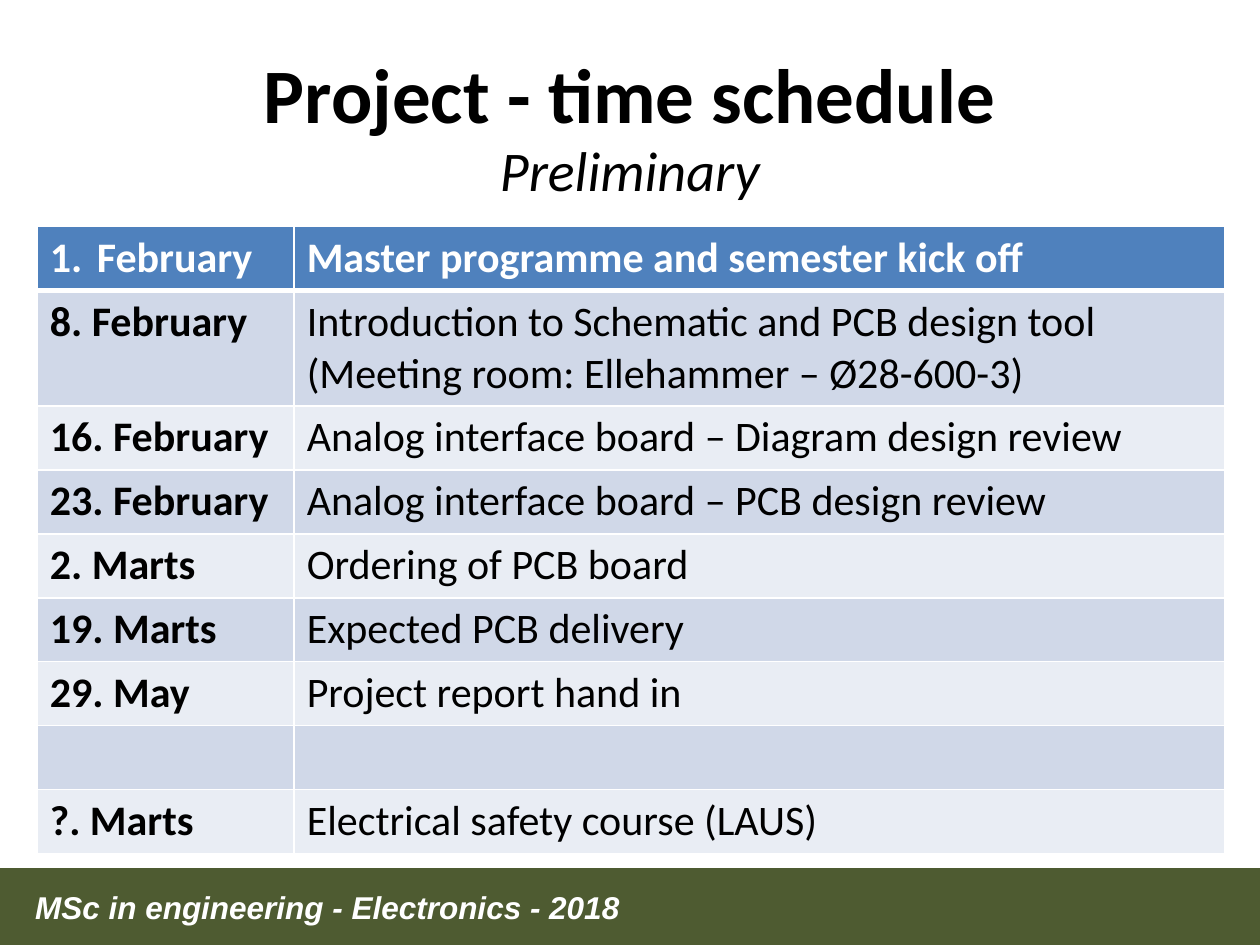
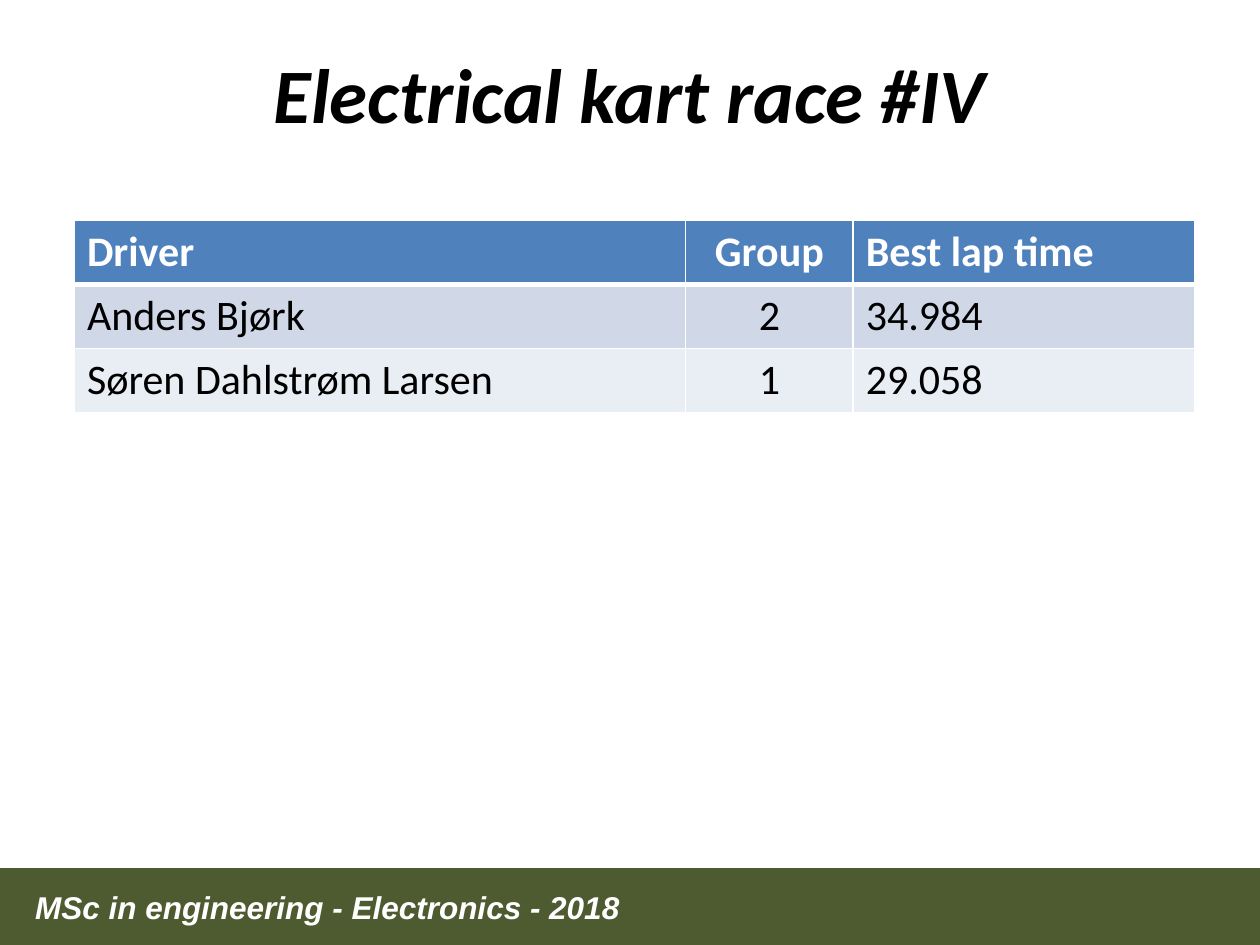
from lxml import etree
from pptx import Presentation
from pptx.dml.color import RGBColor
from pptx.enum.shapes import MSO_SHAPE
from pptx.enum.text import MSO_ANCHOR, MSO_AUTO_SIZE, PP_ALIGN
from pptx.oxml.ns import qn
from pptx.util import Cm, Pt

RECT = MSO_SHAPE.RECTANGLE
TOP = MSO_ANCHOR.TOP
NO_FIT = MSO_AUTO_SIZE.NONE
LEFT, CENTER = PP_ALIGN.LEFT, PP_ALIGN.CENTER

FOOTER = "MSc in engineering - Electronics - 2018"
ROW_HEIGHT = 1.29

SCHEDULE = [
    ("February", "Master programme and semester kick off"),
    ("8. February", "Introduction to Schematic and PCB design tool "
                    "(Meeting room: Ellehammer – Ø28-600-3)"),
    ("16. February", "Analog interface board – Diagram design review"),
    ("23. February", "Analog interface board – PCB design review"),
    ("2. Marts", "Ordering of PCB board"),
    ("19. Marts", "Expected PCB delivery"),
    ("29. May", "Project report hand in"),
    ("", ""),
    ("?. Marts", "Electrical safety course (LAUS)"),
]
LAP_TIMES = [
    ("Driver", "Group", "Best lap time"),
    ("Anders Bjørk", "2", "34.984"),
    ("Søren Dahlstrøm Larsen", "1", "29.058"),
]


def rgb(hex_color):
    return RGBColor.from_string(hex_color)


class Deck:
    BODY_FONT, FOOTER_FONT = "Calibri", "Arial"
    BLACK, WHITE, GREEN = "000000", "FFFFFF", "4E5B31"
    HEADER, BANDS = "4F81BD", ("D0D8E8", "E9EDF4")

    def __init__(self):
        self.prs = Presentation()
        self.prs.slide_width, self.prs.slide_height = Cm(25.4), Cm(19.05)
        self.s = None

    def style(self, font, name, size, color, bold=False, italic=False):
        font.name, font.size = name, Pt(size)
        font.bold, font.italic = bold, italic
        font.color.rgb = rgb(color)

    def slide(self, *title_lines):
        """Start a slide; each title line is (text, size, bold, italic)."""
        self.s = self.prs.slides.add_slide(self.prs.slide_layouts[5])
        self.footer()
        self.title(title_lines)

    def title(self, lines):
        sp = self.s.shapes.title
        sp.left, sp.top, sp.width, sp.height = Cm(1.27), Cm(0.76), Cm(22.86), Cm(3.18)
        tf = sp.text_frame
        tf.word_wrap, tf.auto_size, tf.vertical_anchor = True, NO_FIT, TOP
        tf.margin_top = Cm(0.31)
        p = tf.paragraphs[0]
        p.alignment, p.line_spacing = CENTER, 0.95
        for i, (text, size, bold, italic) in enumerate(lines):
            if i:
                p.add_line_break()
            r = p.add_run()
            r.text = text
            self.style(r.font, self.BODY_FONT, size, self.BLACK, bold, italic)

    def footer(self):
        band = self.s.shapes.add_shape(RECT, 0, Cm(17.5), Cm(25.4), Cm(1.55))
        band.shadow.inherit = False
        band.fill.solid()
        band.fill.fore_color.rgb = rgb(self.GREEN)
        band.line.fill.background()
        sp = self.s.shapes.add_textbox(Cm(0.46), Cm(17.78), Cm(16.15), Cm(1.02))
        tf = sp.text_frame
        tf.word_wrap = True
        tf.text = FOOTER
        self.style(tf.paragraphs[0].runs[0].font, self.FOOTER_FONT, 18, self.WHITE, True, True)

    def table(self, left, top, widths, rows, bold_first=False, centered=()):
        """Add a table with a header row and banded body rows."""
        frame = self.s.shapes.add_table(len(rows), len(widths), Cm(left), Cm(top),
                                        Cm(sum(widths)), Cm(ROW_HEIGHT * len(rows)))
        table = frame.table
        for column, width in zip(table.columns, widths):
            column.width = Cm(width)
        for i, texts in enumerate(rows):
            table.rows[i].height = Cm(ROW_HEIGHT)
            for j, text in enumerate(texts):
                cell = table.cell(i, j)
                self.borders(cell, top=3 if i == 1 else 1, bottom=1 if i else 3)
                cell.fill.solid()
                cell.fill.fore_color.rgb = rgb(self.BANDS[(i - 1) % 2] if i else self.HEADER)
                if not text:
                    continue
                cell.text_frame.text = text
                p = cell.text_frame.paragraphs[0]
                p.alignment = CENTER if j in centered else LEFT
                self.style(p.runs[0].font, self.BODY_FONT, 24,
                           self.BLACK if i else self.WHITE,
                           bold=i == 0 or (bold_first and j == 0))
        return table

    def borders(self, cell, top, bottom):
        tc_pr = cell._tc.get_or_add_tcPr()
        for side, width in (("L", 1), ("R", 1), ("T", top), ("B", bottom)):
            ln = etree.SubElement(tc_pr, qn("a:ln" + side), w=str(Pt(width)))
            fill = etree.SubElement(ln, qn("a:solidFill"))
            etree.SubElement(fill, qn("a:srgbClr"), val=self.WHITE)

    def number(self, p, indent):
        """Give a paragraph an automatic number with a hanging indent."""
        p_pr = p._p.get_or_add_pPr()
        p_pr.set("marL", str(Cm(indent)))
        p_pr.set("indent", str(-Cm(indent)))
        etree.SubElement(p_pr, qn("a:buFont"), typeface="+mj-lt")
        etree.SubElement(p_pr, qn("a:buAutoNum"), type="arabicPeriod")


def main():
    deck = Deck()

    # Time schedule
    deck.slide(("Project - time schedule", 44, True, False),
               ("Preliminary", 32, False, True))
    schedule = deck.table(0.75, 4.57, (5.18, 18.75), SCHEDULE, bold_first=True)
    schedule.rows[1].height = Cm(2.32)
    deck.number(schedule.cell(0, 0).text_frame.paragraphs[0], 0.95)

    # Kart race results
    deck.slide(("Electrical kart race #IV", 44, True, True))
    deck.table(1.5, 4.45, (12.32, 3.38, 6.88), LAP_TIMES, centered=(1,))

    deck.prs.save("out.pptx")


if __name__ == "__main__":
    main()
